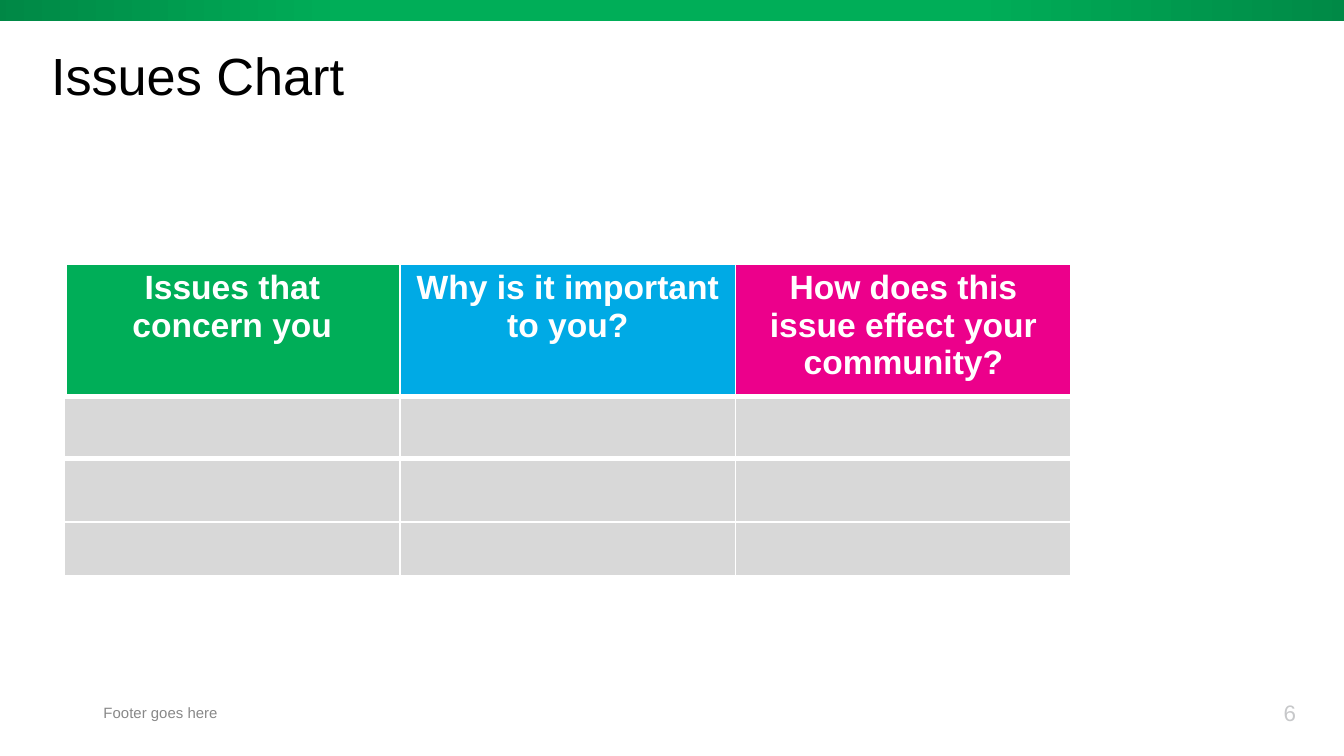
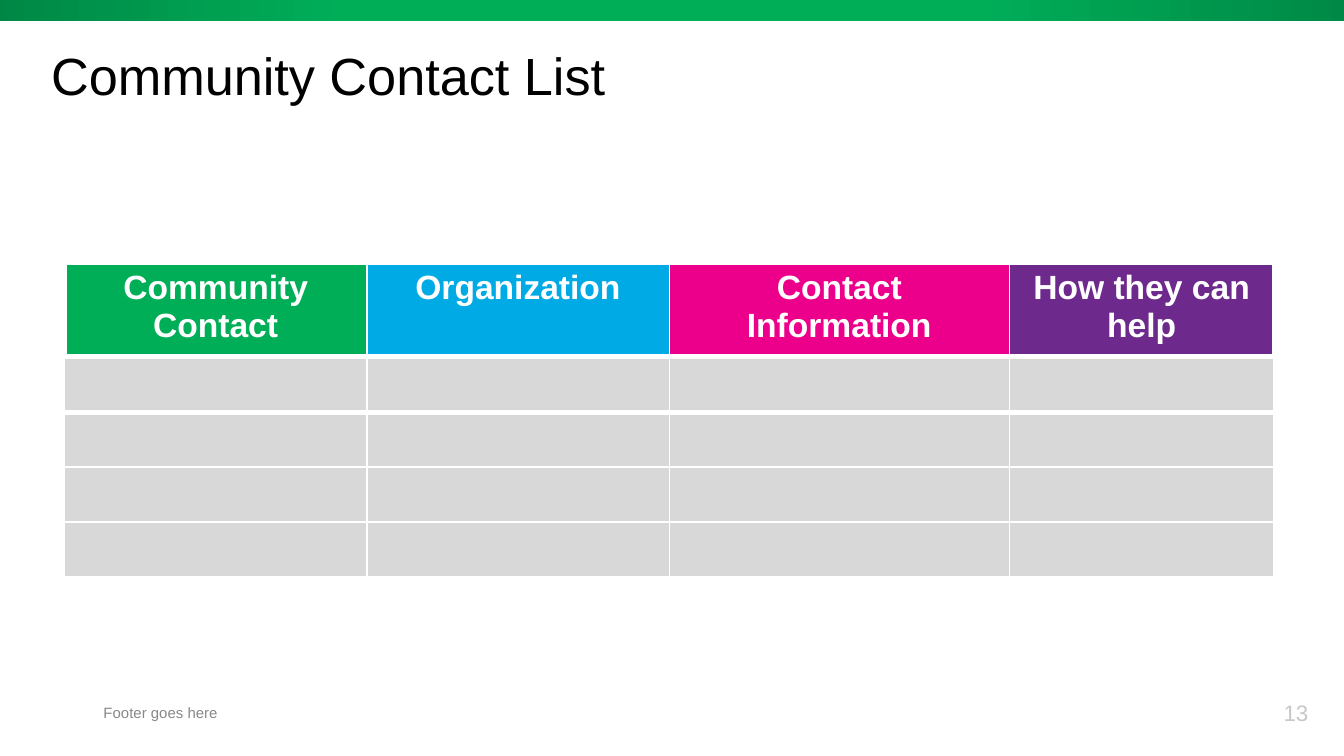
import copy
import pptx
import pptx.dml.color
import pptx.enum.shapes
import pptx.enum.text
import pptx.oxml
import pptx.oxml.ns
import pptx.util

RGBColor = pptx.dml.color.RGBColor
WHITE = RGBColor(0xFF, 0xFF, 0xFF)
BLACK = RGBColor(0x00, 0x00, 0x00)
GREEN = RGBColor(0x00, 0xAE, 0x58)
DARK_GREEN = RGBColor(0x00, 0x87, 0x45)
BLUE = RGBColor(0x00, 0xAA, 0xE5)
PINK = RGBColor(0xEC, 0x00, 0x8B)
PURPLE = RGBColor(0x6E, 0x29, 0x8D)
CELL_GREY = RGBColor(0xD8, 0xD8, 0xD8)
NUMBER_GREY = RGBColor(0xC7, 0xC8, 0xCA)
FOOTER_GREY = RGBColor(0x88, 0x88, 0x88)

FONT = "Arial"
HEADER_COLORS = [GREEN, BLUE, PINK, PURPLE]
BAND_STOPS = [(0, DARK_GREEN), (26, GREEN), (71, GREEN), (100, DARK_GREEN)]
THIN, THICK = 1, 3

deck = pptx.Presentation()
deck.slide_width = pptx.util.Inches(10)
deck.slide_height = deck.slide_width * 9 // 16
COL = deck.slide_width / 100
ROW = deck.slide_height / 100

PAGES = [
    {
        "title": "Issues Chart",
        "number": "6",
        "headers": [
            "Issues that concern you",
            "Why is it important to you?",
            "How does this issue effect your community?",
        ],
        "columns": [24.97, 24.97, 24.97],
        "rows": [9.07, 8.18, 8.36, 7.2],
        "height": 41.6,
    },
    {
        "title": "Community Contact List",
        "number": "13",
        "headers": [
            "Community Contact",
            "Organization",
            "Contact Information",
            "How they can help",
        ],
        "columns": [22.5, 22.5, 25.3, 19.7],
        "rows": [9.07, 7.47, 6.93, 7.29, 7.29],
        "height": 41.42,
    },
]


def add_label(slide, text, left, top, width, height, size, color):
    label = slide.shapes.add_textbox(
        int(left * COL), int(top * ROW), int(width * COL), int(height * ROW)
    )
    frame = label.text_frame
    frame.word_wrap = True
    frame.vertical_anchor = pptx.enum.text.MSO_ANCHOR.MIDDLE
    frame.margin_left = frame.margin_right = 0
    frame.margin_top = frame.margin_bottom = 0
    run = frame.paragraphs[0].add_run()
    run.text = text
    run.font.name = FONT
    run.font.size = pptx.util.Pt(size)
    run.font.color.rgb = color
    return frame.paragraphs[0]


def add_borders(cell, widths):
    properties = cell._tc.get_or_add_tcPr()
    for position, (side, width) in enumerate(zip("LRTB", widths)):
        border = pptx.oxml.parse_xml(
            f'<a:ln{side} {pptx.oxml.ns.nsdecls("a")} w="{pptx.util.Pt(width)}">'
            f'<a:solidFill><a:srgbClr val="{WHITE}"/></a:solidFill></a:ln{side}>'
        )
        properties.insert(position, border)


for page in PAGES:
    slide = deck.slides.add_slide(deck.slide_layouts[6])

    band = slide.shapes.add_shape(
        pptx.enum.shapes.MSO_SHAPE.RECTANGLE,
        int(-0.9 * COL), int(-0.18 * ROW), int(103 * COL), int(3.02 * ROW),
    )
    band.shadow.inherit = False
    band.line.fill.background()
    band.fill.gradient()
    band.fill.gradient_angle = 0
    stop_list = band._element.spPr.find(".//" + pptx.oxml.ns.qn("a:gsLst"))
    for stop in list(stop_list)[1:]:
        stop_list.remove(stop)
    for _ in BAND_STOPS[1:]:
        stop_list.append(copy.deepcopy(stop_list[0]))
    for stop, (percent, color) in zip(band.fill.gradient_stops, BAND_STOPS):
        stop.position = percent / 100
        stop.color.rgb = color

    title = add_label(slide, page["title"], 3.8, 3.73, 63.8, 13.87, 28, BLACK)
    title.line_spacing = 0.8
    add_label(slide, page["number"], 95.5, 91.6, 4.5, 5.33, 12, NUMBER_GREY)
    add_label(slide, "Footer goes here", 7.7, 92.8, 58.1, 3.02, 8, FOOTER_GREY)

    columns, rows = page["columns"], page["rows"]
    table_frame = slide.shapes.add_table(
        len(rows), len(columns),
        int(4.8 * COL), int(34.7 * ROW),
        int(sum(columns) * COL), int(page["height"] * ROW),
    )
    grid = table_frame.table
    grid.first_row = False
    grid.horz_banding = False
    for column, width in zip(grid.columns, columns):
        column.width = int(width * COL)
    for row, height in zip(grid.rows, rows):
        row.height = int(height * ROW)
    table_frame.height = int(page["height"] * ROW)

    for r in range(len(rows)):
        for c, header in enumerate(page["headers"]):
            cell = grid.cell(r, c)
            cell.fill.solid()
            cell.fill.fore_color.rgb = CELL_GREY if r else HEADER_COLORS[c]
            left = THICK if r == 0 and c == 0 else THIN
            right = THICK if r == 0 and c == 3 else THIN
            top = THICK if r <= 2 else THIN
            bottom = THICK if r <= 1 else THIN
            add_borders(cell, [left, right, top, bottom])
            if r == 0:
                paragraph = cell.text_frame.paragraphs[0]
                paragraph.alignment = pptx.enum.text.PP_ALIGN.CENTER
                run = paragraph.add_run()
                run.text = header
                run.font.name = FONT
                run.font.size = pptx.util.Pt(18)
                run.font.bold = True
                run.font.color.rgb = WHITE

deck.save("out.pptx")
